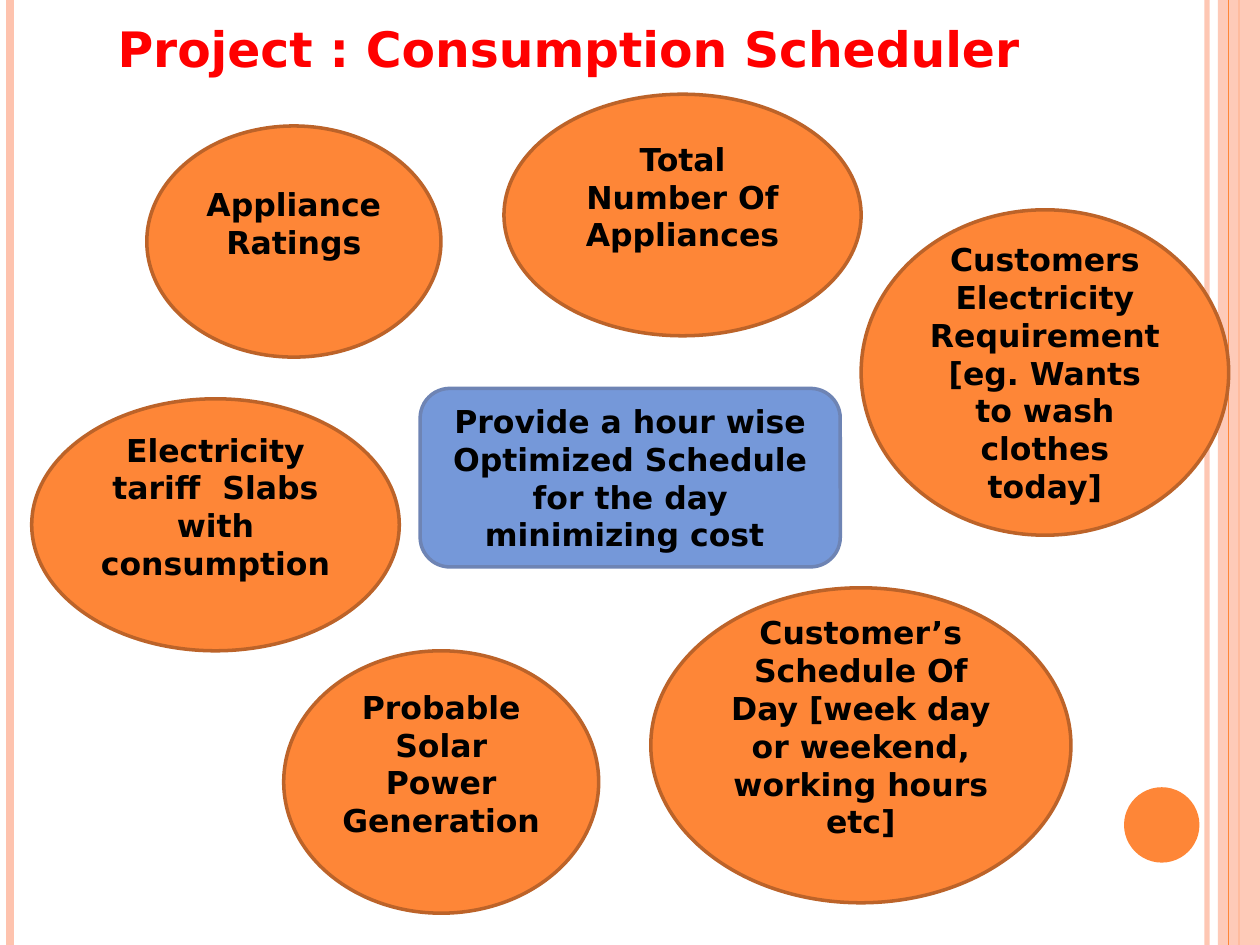
import pptx
import pptx.util
import pptx.dml.color
import pptx.enum.shapes
import pptx.enum.text
import pptx.oxml.ns
import lxml.etree

Cm, Pt = pptx.util.Cm, pptx.util.Pt
MSO_SHAPE = pptx.enum.shapes.MSO_SHAPE
qn = pptx.oxml.ns.qn
FONT = "DejaVu Sans"
ORANGE, PINK = "FE8637", "FEC3AE"
W, H = 25.4, 19.05


def paint(fmt, color, alpha=None):
    """Give a fill a solid colour, with opacity in percent if wanted."""
    fmt.solid()
    fmt.fore_color.rgb = pptx.dml.color.RGBColor.from_string(color)
    if alpha is not None:
        clr = fmt._xPr.find(qn("a:solidFill"))[0]
        lxml.etree.SubElement(clr, qn("a:alpha")).set("val", str(alpha * 1000))


def add_text(tf, text, size, color, align):
    tf.word_wrap = True
    p = tf.paragraphs[0]
    p.alignment = align
    r = p.add_run()
    r.text = text
    r.font.name = FONT
    r.font.size = Pt(size)
    r.font.bold = True
    paint(r.font.fill, color)


prs = pptx.Presentation()
prs.slide_width, prs.slide_height = Cm(W), Cm(H)
s = prs.slides.add_slide(prs.slide_layouts[6])

# Vertical stripes and band at the slide edges; the band covers the third stripe
stripes = [
    (24.33, PINK, 3, 93),
    (0.21, PINK, 4.5, None),
    (24.98, ORANGE, 1.5, None),
    (24.77, ORANGE, 0.75, None),
]
for i, (x, color, width, alpha) in enumerate(stripes):
    if i == 3:
        band = s.shapes.add_shape(MSO_SHAPE.RECTANGLE, Cm(24.55), 0, Cm(0.85), Cm(H))
        band.shadow.inherit = False
        paint(band.fill, PINK, 87)
        band.line.fill.background()
    line = s.shapes.add_connector(
        pptx.enum.shapes.MSO_CONNECTOR.STRAIGHT, Cm(x), 0, Cm(x), Cm(H))
    line.line.width = Pt(width)
    paint(line.line.fill, color, alpha)
    lxml.etree.SubElement(line._element.spPr, qn("a:effectLst"))

dot = s.shapes.add_shape(MSO_SHAPE.OVAL, Cm(22.66), Cm(15.87), Cm(1.52), Cm(1.52))
dot.shadow.inherit = False
paint(dot.fill, ORANGE)
dot.line.fill.background()

title = s.shapes.add_textbox(Cm(2.12), 0, Cm(18.84), Cm(1.69))
title.text_frame.vertical_anchor = pptx.enum.text.MSO_ANCHOR.BOTTOM
add_text(title.text_frame, "Project : Consumption Scheduler", 27.9, "FF0000",
         pptx.enum.text.PP_ALIGN.LEFT)

# Inputs around the central result: text, left, top, width, height, text raised
OVAL, ROUND = MSO_SHAPE.OVAL, MSO_SHAPE.ROUNDED_RECTANGLE
bubbles = [
    (OVAL, "Appliance Ratings", 2.96, 2.54, 5.93, 4.66, True),
    (OVAL, "Total Number Of Appliances", 10.16, 1.9, 7.2, 4.87, True),
    (ROUND, "Provide a hour wise Optimized Schedule for the day minimizing cost ",
     8.47, 7.83, 8.47, 3.6, False),
    (OVAL, "Customers Electricity Requirement [eg. Wants to wash clothes today]",
     17.36, 4.23, 7.41, 6.56, False),
    (OVAL, "Electricity tariff  Slabs with consumption", 0.64, 8.04, 7.41, 5.08, True),
    (OVAL, "Probable Solar Power Generation", 5.72, 13.12, 6.35, 5.29, True),
    (OVAL, "Customer’s Schedule Of Day [week day or weekend, working hours etc]",
     13.12, 11.85, 8.47, 6.35, True),
]
for kind, text, x, y, w, h, raised in bubbles:
    sp = s.shapes.add_shape(kind, Cm(x), Cm(y), Cm(w), Cm(h))
    sp.shadow.inherit = False
    fill, outline = (ORANGE, "BC6329") if kind == OVAL else ("7598D9", "6E84B4")
    paint(sp.fill, fill)
    sp.line.width = Pt(2)
    paint(sp.line.fill, outline)
    tf = sp.text_frame
    tf.vertical_anchor = pptx.enum.text.MSO_ANCHOR.MIDDLE
    if raised:
        tf.margin_bottom = Cm(0.87)
    add_text(tf, text, 18, "000000", pptx.enum.text.PP_ALIGN.CENTER)

prs.save("out.pptx")
